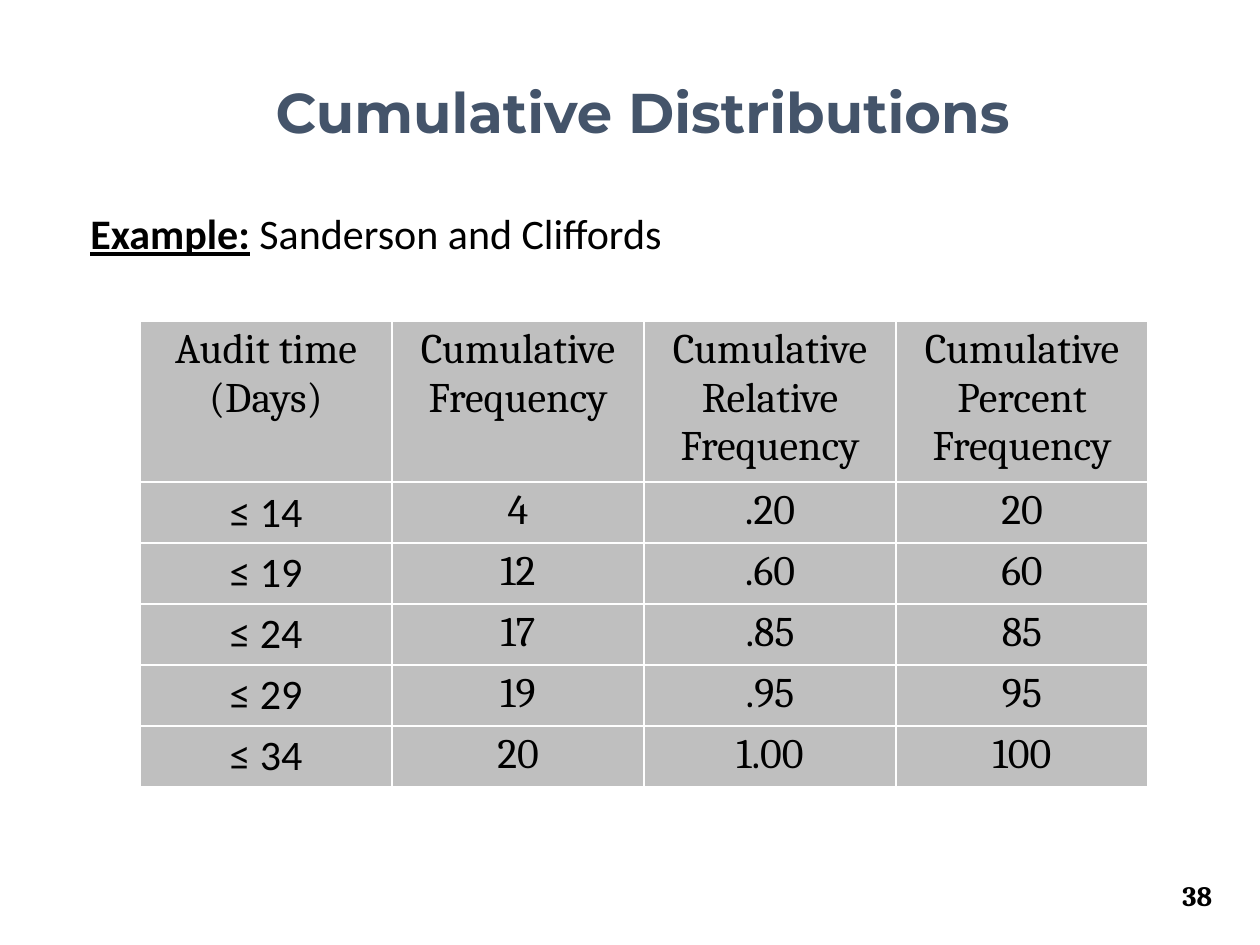
from lxml import etree
from pptx import Presentation
from pptx.dml.color import RGBColor
from pptx.enum.text import MSO_ANCHOR, PP_ALIGN
from pptx.oxml.ns import qn
from pptx.util import Emu, Pt

CENTER = PP_ALIGN.CENTER
LEFT = PP_ALIGN.LEFT
TOP = MSO_ANCHOR.TOP
MIDDLE = MSO_ANCHOR.MIDDLE
SCALE = 914400 / 126


def px(length):
    return Emu(round(length * SCALE))


def write(para, text, color, **font):
    span = para.add_run()
    span.text = text
    span.font.color.rgb = RGBColor.from_string(color)
    for name, value in font.items():
        setattr(span.font, name, value)


deck = Presentation()
deck.slide_width, deck.slide_height = px(1260), px(945)
page = deck.slides.add_slide(deck.slide_layouts[6])

heading = dict(name="Montserrat", size=Pt(32), bold=True)
body = dict(name="Calibri", size=Pt(24))
number = dict(name="Cambria", size=Pt(16), bold=True)
text_boxes = [
    ((100, 24, 1086, 183), MIDDLE, CENTER, 0.9, True,
     [("Cumulative Distributions", "44546A", heading)]),
    ((78, 207, 1086, 100), TOP, LEFT, 0.9, True,
     [("Example:", "000000", dict(body, bold=True, underline=True)),
      (" Sanderson and Cliffords", "000000", body)]),
    ((1170, 872, 68, 47), TOP, LEFT, 1.0, False, [("38", "000000", number)]),
]
for place, anchor, alignment, spacing, wrap, spans in text_boxes:
    box = page.shapes.add_textbox(*map(px, place))
    box.text_frame.word_wrap = wrap
    box.text_frame.vertical_anchor = anchor
    para = box.text_frame.paragraphs[0]
    para.alignment = alignment
    para.line_spacing = spacing
    for text, color, font in spans:
        write(para, text, color, **font)

rows = [
    ("Audit time (Days)", "Cumulative Frequency",
     "Cumulative Relative Frequency", "Cumulative Percent Frequency"),
    ("≤ 14", "4", ".20", "20"),
    ("≤ 19", "12", ".60", "60"),
    ("≤ 24", "17", ".85", "85"),
    ("≤ 29", "19", ".95", "95"),
    ("≤ 34", "20", "1.00", "100"),
]
header_height, row_height, column_width = 161, 61, 252
table = page.shapes.add_table(
    len(rows), len(rows[0]), px(140), px(321), px(column_width * len(rows[0])),
    px(header_height + row_height * (len(rows) - 1))).table
for column in table.columns:
    column.width = px(column_width)
cell_format = dict(margin_left=px(10), margin_right=px(10),
                   margin_top=px(5), margin_bottom=px(5), vertical_anchor=TOP)

for row_index, row in enumerate(rows):
    table.rows[row_index].height = px(row_height if row_index else header_height)
    for column_index, text in enumerate(row):
        cell = table.cell(row_index, column_index)
        for name, value in cell_format.items():
            setattr(cell, name, value)
        properties = cell._tc.get_or_add_tcPr()
        for side in ("a:lnL", "a:lnR", "a:lnT", "a:lnB"):
            line = etree.SubElement(properties, qn(side), w=str(Pt(1)))
            fill = etree.SubElement(line, qn("a:solidFill"))
            etree.SubElement(fill, qn("a:srgbClr"), val="FFFFFF")
        cell.fill.solid()
        cell.fill.fore_color.rgb = RGBColor.from_string("BFBFBF")
        para = cell.text_frame.paragraphs[0]
        para.alignment = CENTER
        is_class = row_index > 0 and column_index == 0
        write(para, text, "000000", name="Calibri" if is_class else "Cambria",
              size=Pt(24), bold=False)

deck.save("out.pptx")
